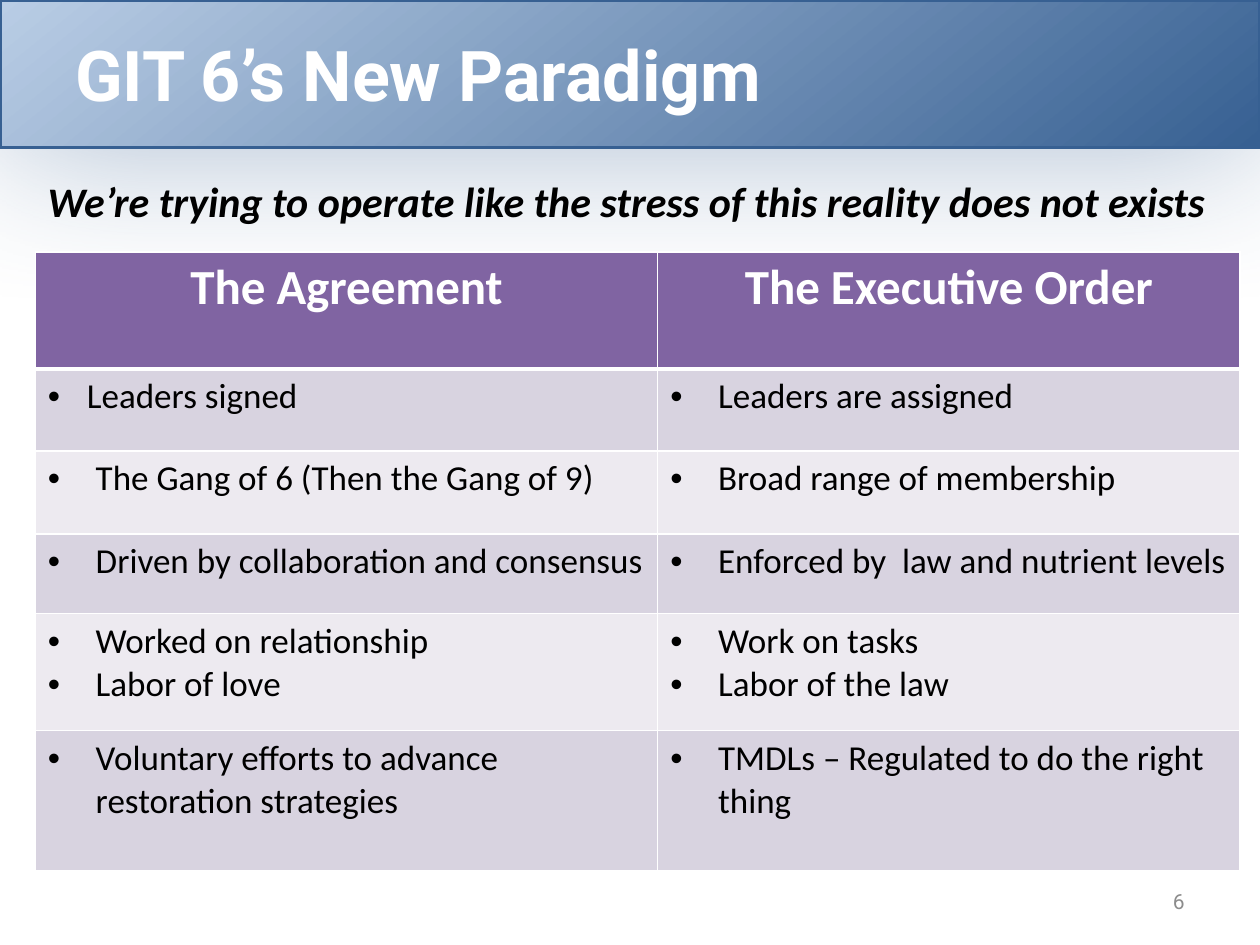
from lxml import etree
from pptx import Presentation
from pptx import util as u
from pptx.dml.color import RGBColor
from pptx.enum import shapes, text
from pptx.oxml import parse_xml
from pptx.oxml.ns import nsdecls, qn

TITLE = "GIT 6’s New Paradigm"
SUBTITLE = "We’re trying to operate like the stress of this reality does not exists"
PAGE_NUMBER = "6"
HEADERS = ["The Agreement", "The Executive Order"]
COMPARISONS = [
    (["Leaders signed"], ["Leaders are assigned"]),
    (["The Gang of 6 (Then the Gang of 9)"], ["Broad range of membership"]),
    (["Driven by collaboration and consensus"], ["Enforced by  law and nutrient levels"]),
    (["Worked on relationship", "Labor of love"], ["Work on tasks", "Labor of the law"]),
    (["Voluntary efforts to advance restoration strategies"],
     ["TMDLs – Regulated to do the right thing"]),
]
COLUMN_WIDTHS = [4.94, 4.62]
ROW_HEIGHTS = [0.93, 0.65, 0.66, 0.63, 0.93, 1.11]
BAND_FILLS = ["D8D3E0", "EDEAF0"]
WIDTH, HEIGHT, BANNER_HEIGHT, LEFT = 10, 7.5, 1.17, 0.28


def color(value):
    return RGBColor.from_string(value)


def format_paragraph(paragraph, size, font, fill, bold=False, italic=False, align=text.PP_ALIGN.LEFT):
    paragraph.alignment = align
    for run in paragraph.runs:
        run.font.size, run.font.name = u.Pt(size), font
        run.font.bold, run.font.italic = bold, italic
        run.font.color.rgb = color(fill)


def add_text(slide, box, content, anchor, **style):
    shape = slide.shapes.add_textbox(*map(u.Inches, box))
    frame = shape.text_frame
    frame.word_wrap = True
    frame.vertical_anchor = anchor
    frame.text = content
    format_paragraph(frame.paragraphs[0], **style)


def add_banner(slide):
    banner = slide.shapes.add_shape(
        shapes.MSO_SHAPE.RECTANGLE, 0, 0, u.Inches(WIDTH), u.Inches(BANNER_HEIGHT))
    banner.fill.gradient()
    banner.fill.gradient_angle = 360 - 51
    for stop, position, value in zip(banner.fill.gradient_stops, (0, 1), ("B9CDE5", "376092")):
        stop.position, stop.color.rgb = position, color(value)
    banner.line.color.rgb, banner.line.width = color("376092"), u.Pt(2)
    banner.shadow.inherit = False
    effects = banner._element.spPr.find(qn("a:effectLst"))
    effects.append(parse_xml(
        f'<a:outerShdw {nsdecls("a")} blurRad="{u.Pt(93.5)}" dist="{u.Pt(2)}" dir="5400000" '
        'algn="t" rotWithShape="0"><a:srgbClr val="376092"><a:alpha val="40000"/>'
        '</a:srgbClr></a:outerShdw>'))


def set_borders(cell, top, bottom):
    properties = cell._tc.get_or_add_tcPr()
    for index, (side, width) in enumerate(zip("LRTB", (1, 1, top, bottom))):
        properties.insert(index, parse_xml(
            f'<a:ln{side} {nsdecls("a")} w="{u.Pt(width)}"><a:solidFill>'
            f'<a:srgbClr val="FFFFFF"/></a:solidFill></a:ln{side}>'))


def add_bullet(paragraph, indent):
    properties = paragraph._p.get_or_add_pPr()
    properties.set("marL", str(u.Inches(indent)))
    properties.set("indent", str(-u.Inches(indent)))
    etree.SubElement(properties, qn("a:buFont")).set("typeface", "Arial")
    etree.SubElement(properties, qn("a:buChar")).set("char", "•")


def fill_cell(cell, lines, row, column):
    cell.text = "\n".join(lines)
    cell.fill.solid()
    if row == 0:
        cell.fill.fore_color.rgb = color("8064A2")
        format_paragraph(cell.text_frame.paragraphs[0], 28, "Calibri", "FFFFFF",
                         bold=True, align=text.PP_ALIGN.CENTER)
    else:
        cell.fill.fore_color.rgb = color(BAND_FILLS[(row - 1) % 2])
        for paragraph in cell.text_frame.paragraphs:
            format_paragraph(paragraph, 20, "Calibri", "000000")
            add_bullet(paragraph, 0.31 if (row, column) == (1, 0) else 0.38)
    set_borders(cell, top=3 if row == 1 else 1, bottom=3 if row == 0 else 1)


def add_comparison(slide):
    rows = [[[header] for header in HEADERS], *COMPARISONS]
    table = slide.shapes.add_table(
        len(rows), len(HEADERS), u.Inches(LEFT), u.Inches(2),
        u.Inches(sum(COLUMN_WIDTHS)), u.Inches(sum(ROW_HEIGHTS))).table
    table.horz_banding = False
    for column, width in zip(table.columns, COLUMN_WIDTHS):
        column.width = u.Inches(width)
    for row, height in zip(table.rows, ROW_HEIGHTS):
        row.height = u.Inches(height)
    for row, cells in enumerate(rows):
        for column, lines in enumerate(cells):
            fill_cell(table.cell(row, column), lines, row, column)


def main():
    presentation = Presentation()
    presentation.slide_width, presentation.slide_height = u.Inches(WIDTH), u.Inches(HEIGHT)
    slide = presentation.slides.add_slide(presentation.slide_layouts[6])
    middle, top = text.MSO_ANCHOR.MIDDLE, text.MSO_ANCHOR.TOP
    add_banner(slide)
    add_text(slide, (0.5, 0, 8.5, BANNER_HEIGHT), TITLE, middle,
             size=40, font="Roboto", fill="FFFFFF", bold=True)
    add_text(slide, (7.17, 6.95, 2.33, 0.4), PAGE_NUMBER, middle,
             size=12, font="Roboto", fill="8C8C8C", align=text.PP_ALIGN.RIGHT)
    add_comparison(slide)
    add_text(slide, (LEFT, 1.34, WIDTH - LEFT, 0.5), SUBTITLE, top,
             size=24, font="Calibri", fill="000000", bold=True, italic=True)
    presentation.save("out.pptx")


if __name__ == "__main__":
    main()
